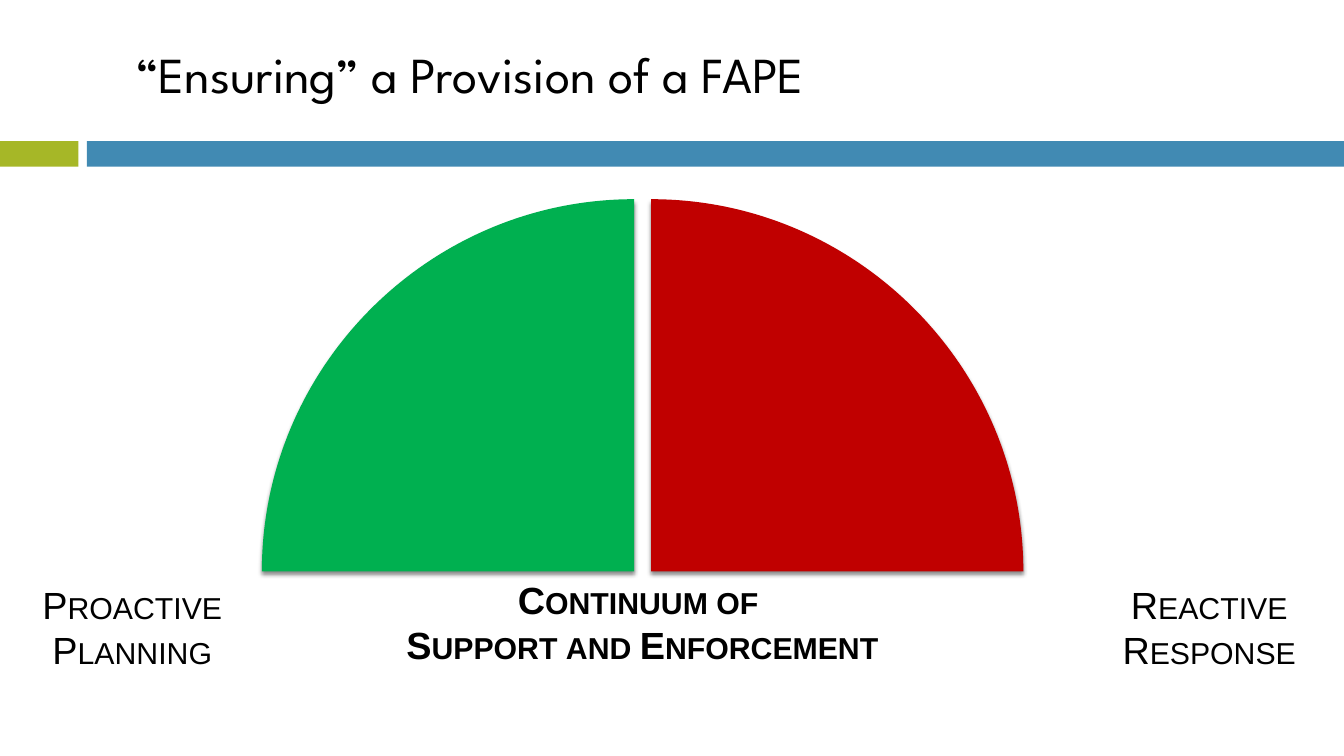
"""Build the slide on the continuum of support and enforcement."""
from lxml import etree
from pptx import Presentation
from pptx import util as u
from pptx.dml.color import RGBColor
from pptx.enum import shapes, text
from pptx.oxml import ns


def paint(shape, color):
    shape.fill.solid()
    shape.fill.fore_color.rgb = RGBColor.from_string(color)
    shape.line.fill.background()
    shape.shadow.inherit = False


def style(para, font, size, bold=False):
    para.alignment = text.PP_ALIGN.CENTER
    para.font.name = font
    para.font.size = u.Pt(size)
    para.font.bold = bold
    para.font.color.rgb = RGBColor.from_string("000000")


deck = Presentation()
deck.slide_width, deck.slide_height = u.Cm(33.87), u.Cm(19.05)
slide = deck.slides.add_slide(deck.slide_layouts[5])

for left, width, color in [(2.19, 31.68, "418AB3"), (0, 1.98, "A6B727")]:
    band = slide.shapes.add_shape(
        shapes.MSO_SHAPE.RECTANGLE, u.Cm(left), u.Cm(3.56), u.Cm(width), u.Cm(0.64))
    paint(band, color)

radius, base = 9.38, 14.4
bend = 0.55 * radius
dial = slide.shapes.add_group_shape()
for mid, side, color in [(15.98, -1, "00B050"), (16.41, 1, "C00000")]:
    pen = dial.shapes.build_freeform(u.Cm(mid + side * radius), u.Cm(base))
    pen.add_line_segments(
        [(u.Cm(mid), u.Cm(base - radius)), (u.Cm(mid), u.Cm(base))], close=True)
    wedge = pen.convert_to_shape()
    paint(wedge, color)

    chord = next(wedge._element.iter(ns.qn("a:lnTo")))
    curve = etree.Element(ns.qn("a:cubicBezTo"))
    hub = radius if side < 0 else 0
    for out, rise in [(radius, bend), (bend, radius), (0, radius)]:
        etree.SubElement(curve, ns.qn("a:pt"), x=str(u.Cm(hub + side * out)),
                         y=str(u.Cm(radius - rise)))
    chord.getparent().replace(chord, curve)

    effects = wedge._element.spPr.find(ns.qn("a:effectLst"))
    shade = etree.SubElement(
        effects, ns.qn("a:outerShdw"), blurRad=str(u.Pt(3)), dist=str(u.Pt(2.4)),
        dir="5400000", rotWithShape="0")
    black = etree.SubElement(shade, ns.qn("a:srgbClr"), val="000000")
    etree.SubElement(black, ns.qn("a:alpha"), val="45000")

labels = [
    (6.6, 14.4, 19.18, True, ["Continuum of ", "Support and Enforcement"]),
    (0.53, 14.53, 5.61, False, ["Proactive Planning"]),
    (26.26, 14.53, 8.43, False, ["Reactive Response"]),
]
for left, top, width, bold, lines in labels:
    box = slide.shapes.add_textbox(u.Cm(left), u.Cm(top), u.Cm(width), u.Cm(2.57))
    frame = box.text_frame
    frame.word_wrap = True
    frame.text = "\n".join(lines)
    for para in frame.paragraphs:
        style(para, "Arial", 27, bold)
        para._p.pPr.find(ns.qn("a:defRPr")).set("cap", "small")

title = slide.shapes.title
title.left, title.top = u.Cm(1.27), u.Cm(0.64)
title.width, title.height = u.Cm(21.16), u.Cm(2.41)
frame = title.text_frame
frame.text = "“Ensuring” a Provision of a FAPE"
frame.margin_left = frame.margin_right = frame.margin_top = frame.margin_bottom = 0
frame.vertical_anchor = text.MSO_ANCHOR.MIDDLE
style(frame.paragraphs[0], "League Spartan", 36)

deck.save("out.pptx")
